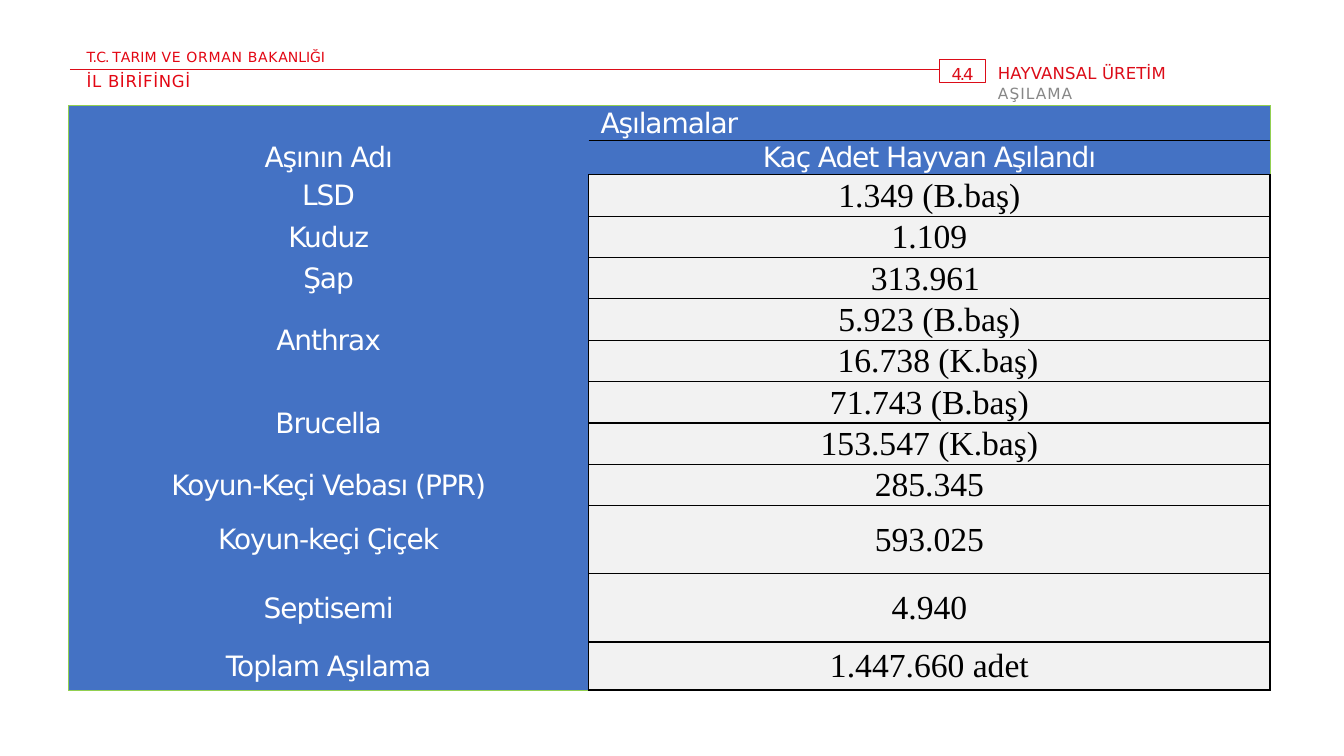
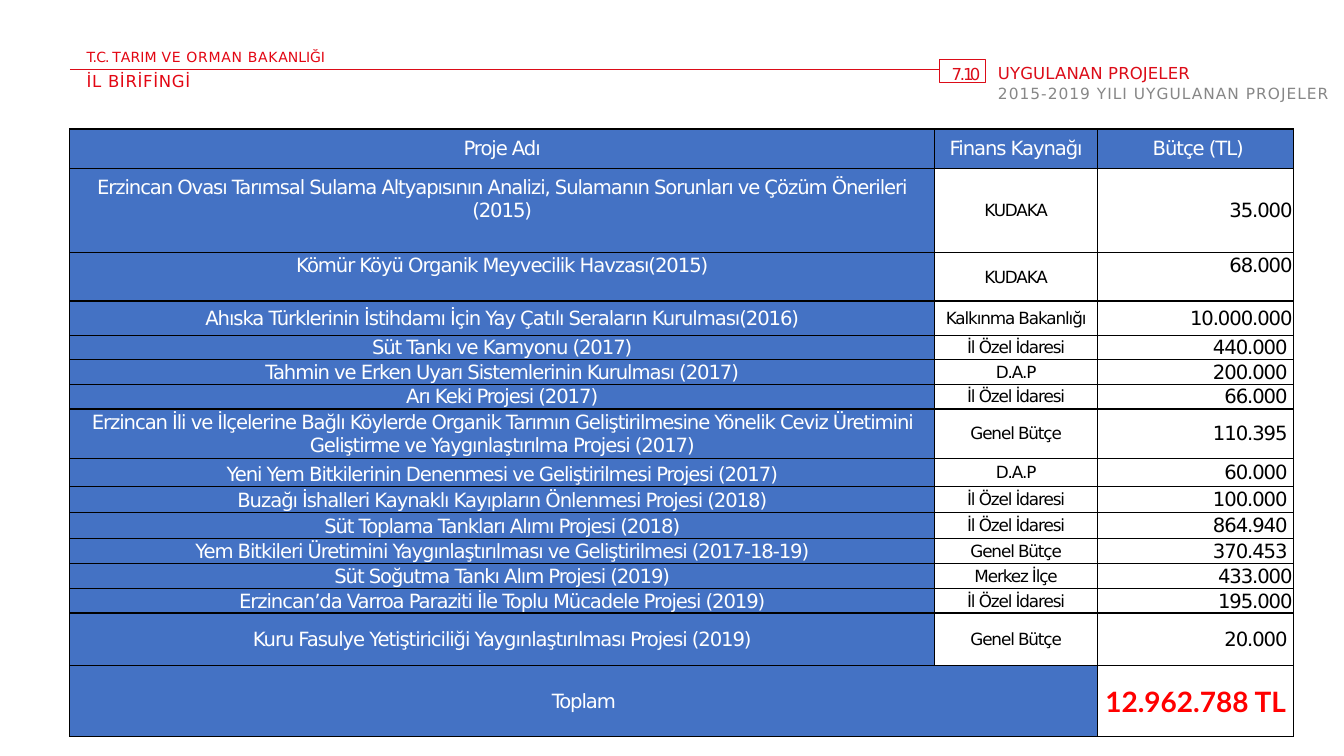
from dataclasses import dataclass, field, replace

from lxml import etree
from pptx import Presentation
from pptx import util as u
from pptx.dml.color import RGBColor
from pptx.enum import shapes, text
from pptx.oxml import ns

LEFT, CENTER, RIGHT = text.PP_ALIGN.LEFT, text.PP_ALIGN.CENTER, text.PP_ALIGN.RIGHT


@dataclass(frozen=True)
class Theme:
    ministry: str = "E30613"
    accent: str = "DC0C18"
    muted: str = "878787"
    blue: str = "4472C4"
    pale: str = "F2F2F2"
    white: str = "FFFFFF"
    black: str = "000000"
    green: str = "92D050"
    total: str = "FF0000"
    sans: str = "DejaVu Sans"
    serif: str = "Times New Roman"
    display: str = "Lato"
    tiny: float = 10
    caption: float = 11
    heading: float = 11.8
    source: float = 12
    body: float = 14
    large: float = 20
    figure: float = 24
    rule: float = 0.82
    plain_table: str = "{2D5ABB26-0587-4C30-8999-92F81FD0307C}"


THEME = Theme()


@dataclass(frozen=True)
class Style:
    size: float
    color: str
    font: str = THEME.sans
    spacing: float = 0
    align: text.PP_ALIGN = CENTER
    bold: bool = False


@dataclass(frozen=True)
class Span:
    words: str
    style: Style


@dataclass(frozen=True)
class Place:
    left: float
    top: float
    width: float
    height: float

    def emu(self) -> tuple[int, int, int, int]:
        return (across(self.left), down(self.top), across(self.width), down(self.height))


@dataclass(frozen=True)
class Cell:
    words: str
    style: Style
    fill: str
    edges: dict[str, tuple[str, float]] = field(default_factory=dict)
    left: float = 0.01
    right: float = 0.01
    bottom: float = 0
    leading: float = 1


@dataclass(frozen=True)
class Project:
    name: str
    source: str
    budget: str
    weight: int
    inset: float = 0.06
    name_lift: float = 0
    budget_lift: float = 0
    leading: float = 1


@dataclass(frozen=True)
class Grid:
    place: Place
    columns: list[float]
    rows: list[float]
    cells: list[list[Cell]]
    merges: list[tuple[int, int, int, int]]


SLIDE_WIDTH, SLIDE_HEIGHT = u.Inches(13.33), u.Inches(7.5)
MINISTRY = Place(6.38, 6.27, 18.4, 2.4)
BRIEFING = Place(6.38, 9.2, 19.05, 2.8)
SECTION = Place(74.18, 8.27, 25.8, 5.47)
NUMBER = Place(69.9, 7.87, 3.4, 3.07)
RULE_LEFT = 5.2

BLACK_EDGE, GREEN_EDGE = (THEME.black, 1), (THEME.green, 0.5)
BOXED = dict.fromkeys("LRTB", BLACK_EDGE)

VACCINES = [
    ("LSD", ["1.349 (B.baş)"], 0.41),
    ("Kuduz", ["1.109"], 0.41),
    ("Şap", ["313.961"], 0.41),
    ("Anthrax", ["5.923 (B.baş)", "16.738 (K.baş)"], 0.41),
    ("Brucella", ["71.743 (B.baş)", "153.547 (K.baş)"], 0.41),
    ("Koyun-Keçi Vebası (PPR)", ["285.345"], 0.41),
    ("Koyun-keçi Çiçek", ["593.025"], 0.68),
    ("Septisemi", ["4.940"], 0.68),
    ("Toplam Aşılama", ["1.447.660 adet"], 0.48),
]

PROJECTS = [
    Project("Erzincan Ovası Tarımsal Sulama Altyapısının Analizi, Sulamanın Sorunları ve Çözüm Önerileri\n(2015)",
            "KUDAKA", "35.000", 84, 0.01, name_lift=0.23),
    Project("Kömür Köyü Organik Meyvecilik Havzası(2015)", "KUDAKA", "68.000", 48, 0.01, 0.23, 0.23),
    Project("Ahıska Türklerinin İstihdamı İçin Yay Çatılı Seraların Kurulması(2016)",
            "Kalkınma Bakanlığı", "10.000.000", 34, 0.01),
    Project("Süt Tankı ve Kamyonu (2017)", "İl Özel İdaresi", "440.000", 24),
    Project("Tahmin ve Erken Uyarı Sistemlerinin Kurulması (2017)", "D.A.P", "200.000", 24),
    Project("Arı Keki Projesi (2017)", "İl Özel İdaresi", "66.000", 24),
    Project("Erzincan İli ve İlçelerine Bağlı Köylerde Organik Tarımın Geliştirilmesine Yönelik Ceviz Üretimini "
            "Geliştirme ve Yaygınlaştırılma Projesi (2017)", "Genel Bütçe", "110.395", 49),
    Project("Yeni Yem Bitkilerinin Denenmesi ve Geliştirilmesi Projesi (2017)", "D.A.P", "60.000", 28, leading=1.15),
    Project("Buzağı İshalleri Kaynaklı Kayıpların Önlenmesi Projesi (2018)",
            "İl Özel İdaresi", "100.000", 26, leading=1.07),
    Project("Süt Toplama Tankları Alımı Projesi (2018)", "İl Özel İdaresi", "864.940", 26, leading=1.07),
    Project("Yem Bitkileri Üretimini Yaygınlaştırılması ve Geliştirilmesi (2017-18-19)",
            "Genel Bütçe", "370.453", 25),
    Project("Süt Soğutma Tankı Alım Projesi (2019)", "Merkez İlçe", "433.000", 24, 0.01),
    Project("Erzincan’da Varroa Paraziti İle Toplu Mücadele Projesi (2019)", "İl Özel İdaresi", "195.000", 24, 0.01),
    Project("Kuru Fasulye Yetiştiriciliği Yaygınlaştırılması Projesi (2019)", "Genel Bütçe", "20.000", 52),
]


def across(percent: float) -> int:
    return round(SLIDE_WIDTH * percent / 100)


def down(percent: float) -> int:
    return round(SLIDE_HEIGHT * percent / 100)


def format_span(span, style: Style) -> None:
    span.font.size = u.Pt(style.size)
    span.font.name = style.font
    span.font.bold = style.bold
    span.font.color.rgb = RGBColor.from_string(style.color)
    span._r.get_or_add_rPr().set("spc", str(round(style.spacing * 100)))


def write_lines(frame, lines: list[list[Span]], left: float, top: float) -> None:
    frame.word_wrap = True
    frame.vertical_anchor = text.MSO_ANCHOR.TOP
    frame.margin_left, frame.margin_top = u.Inches(left), u.Inches(top)
    frame.margin_right = frame.margin_bottom = 0
    for index, line in enumerate(lines):
        para = frame.add_paragraph() if index else frame.paragraphs[0]
        para.alignment = line[0].style.align
        para.space_before = u.Pt(0.8 if index else 0)
        for part in line:
            span = para.add_run()
            span.text = part.words
            format_span(span, part.style)


def add_label(page, place: Place, *lines: list[Span]) -> None:
    box = page.shapes.add_textbox(*place.emu())
    write_lines(box.text_frame, list(lines), 0.01, 0.01)


def add_header(page, number: str, section: str, topic: str) -> None:
    small = Style(THEME.tiny, THEME.ministry, align=LEFT)
    heading = Style(THEME.heading, THEME.accent, spacing=0.1, align=LEFT)
    ministry = [("T.C. T", -0.6), ("ARIM ", 0.1), ("VE ORMAN BAK", 0.5), ("ANLIĞI", 0)]
    add_label(page, MINISTRY, [Span(words, replace(small, spacing=gap)) for words, gap in ministry])
    add_label(page, BRIEFING, [Span("İL BİRİFİNGİ", replace(heading, color=THEME.ministry, spacing=0.5))])
    rule = page.shapes.add_connector(shapes.MSO_CONNECTOR.STRAIGHT, across(RULE_LEFT), down(BRIEFING.top),
                                     across(NUMBER.left), down(BRIEFING.top))
    etree.SubElement(rule._element.spPr, ns.qn("a:effectLst"))
    add_label(page, SECTION, [Span(section, heading)],
              [Span(topic, replace(heading, size=THEME.caption, color=THEME.muted, spacing=0.7))])
    box = page.shapes.add_shape(shapes.MSO_SHAPE.RECTANGLE, *NUMBER.emu())
    box.shadow.inherit = False
    box.fill.background()
    for outlined in (rule, box):
        outlined.line.color.rgb = RGBColor.from_string(THEME.accent)
        outlined.line.width = u.Pt(THEME.rule)
    write_lines(box.text_frame, [[Span(number, replace(heading, spacing=-2.6))]], 0.12, 0.04)


def draw_edges(cell, edges: dict[str, tuple[str, float]]) -> None:
    properties = cell._tc.get_or_add_tcPr()
    sides = [side for side in "LRTB" if side in edges]
    for index, side in enumerate(sides):
        color, width = edges[side]
        line = etree.Element(ns.qn(f"a:ln{side}"), w=str(u.Pt(width)))
        fill = etree.SubElement(line, ns.qn("a:solidFill"))
        etree.SubElement(fill, ns.qn("a:srgbClr"), val=color)
        properties.insert(index, line)


def fill_cell(cell, content: Cell) -> None:
    cell.fill.solid()
    cell.fill.fore_color.rgb = RGBColor.from_string(content.fill)
    draw_edges(cell, content.edges)
    cell.vertical_anchor = text.MSO_ANCHOR.MIDDLE
    cell.margin_left, cell.margin_right = u.Inches(content.left), u.Inches(content.right)
    cell.margin_top, cell.margin_bottom = u.Inches(0.01), u.Inches(content.bottom)
    if not content.words:
        return
    cell.text_frame.text = content.words
    for para in cell.text_frame.paragraphs:
        para.alignment = content.style.align
        para.line_spacing = content.leading
        for span in para.runs:
            format_span(span, content.style)


def add_grid(page, grid: Grid) -> None:
    left, top, width, height = grid.place.emu()
    table = page.shapes.add_table(len(grid.rows), len(grid.columns), left, top, width, height).table
    table.first_row = table.horz_banding = False
    table._tbl.tblPr.find(ns.qn("a:tableStyleId")).text = THEME.plain_table
    for column, weight in zip(table.columns, grid.columns):
        column.width = round(width * weight / sum(grid.columns))
    for row, weight in zip(table.rows, grid.rows):
        row.height = round(height * weight / sum(grid.rows))
    for r, contents in enumerate(grid.cells):
        for c, content in enumerate(contents):
            fill_cell(table.cell(r, c), content)
    for r1, c1, r2, c2 in grid.merges:
        table.cell(r1, c1).merge(table.cell(r2, c2))


def vaccine_grid() -> Grid:
    label = Style(THEME.large, THEME.white, spacing=-0.8)
    figure = Style(THEME.figure, THEME.black, THEME.serif)
    cells = [
        [Cell("Aşılamalar", label, THEME.blue, {"L": GREEN_EDGE, "T": GREEN_EDGE, "R": GREEN_EDGE}),
         Cell("", label, THEME.blue, {"T": GREEN_EDGE, "R": GREEN_EDGE})],
        [Cell("Aşının Adı", label, THEME.blue, {"L": GREEN_EDGE}),
         Cell("Kaç Adet Hayvan Aşılandı", label, THEME.blue,
              {"R": GREEN_EDGE, "T": BLACK_EDGE, "B": BLACK_EDGE})],
    ]
    rows = [0.34, 0.34]
    merges = [(0, 0, 0, 1)]
    for name, counts, weight in VACCINES:
        first = len(cells)
        for index, count in enumerate(counts):
            edges = {"L": GREEN_EDGE, "R": BLACK_EDGE}
            if name == VACCINES[-1][0]:
                edges["B"] = GREEN_EDGE
            cells.append([Cell("" if index else name, label, THEME.blue, edges),
                          Cell(count, figure, THEME.pale, BOXED,
                               left=0.18 if count.startswith("16") else 0.01,
                               right=0.09 if name == "Şap" else 0.01)])
            rows.append(weight)
        if len(counts) > 1:
            merges.append((first, 0, len(cells) - 1, 0))
    return Grid(Place(5.1, 13.96, 89.4, 76.93), [5.16, 6.76], rows, cells, merges)


def project_grid() -> Grid:
    label = Style(THEME.body, THEME.white, spacing=-0.8)
    source = replace(label, size=THEME.source, color=THEME.black)
    budget = replace(label, color=THEME.black, align=RIGHT)
    total = Style(THEME.large, THEME.total, THEME.display, bold=True)
    cells = [[Cell("Proje Adı", label, THEME.blue, BOXED),
              Cell("Finans Kaynağı", label, THEME.blue, BOXED),
              Cell("Bütçe (TL)", label, THEME.blue, BOXED, left=0.06)]]
    cells += [[Cell(item.name, label, THEME.blue, BOXED, bottom=item.name_lift, leading=item.leading),
               Cell(item.source, source, THEME.white, BOXED),
               Cell(item.budget, budget, THEME.white, BOXED, right=item.inset, bottom=item.budget_lift)]
              for item in PROJECTS]
    cells.append([Cell("Toplam", label, THEME.blue, BOXED),
                  Cell("", label, THEME.blue, BOXED),
                  Cell("12.962.788 TL", total, THEME.white, BOXED)])
    rows = [39, *(item.weight for item in PROJECTS), 71]
    last = len(cells) - 1
    return Grid(Place(5.2, 17.07, 91.05, 80.13), [8.57, 1.62, 1.94], rows, cells, [(last, 0, last, 1)])


def main() -> None:
    deck = Presentation()
    deck.slide_width, deck.slide_height = SLIDE_WIDTH, SLIDE_HEIGHT
    for number, section, topic, grid in (
        ("4 . 4", "HAYVANSAL ÜRETİM", "AŞILAMA", vaccine_grid()),
        ("7 . 10", "UYGULANAN PROJELER", "2015-2019 YILI UYGULANAN PROJELER", project_grid()),
    ):
        page = deck.slides.add_slide(deck.slide_layouts[6])
        add_header(page, number, section, topic)
        add_grid(page, grid)
    deck.save("out.pptx")


if __name__ == "__main__":
    main()
